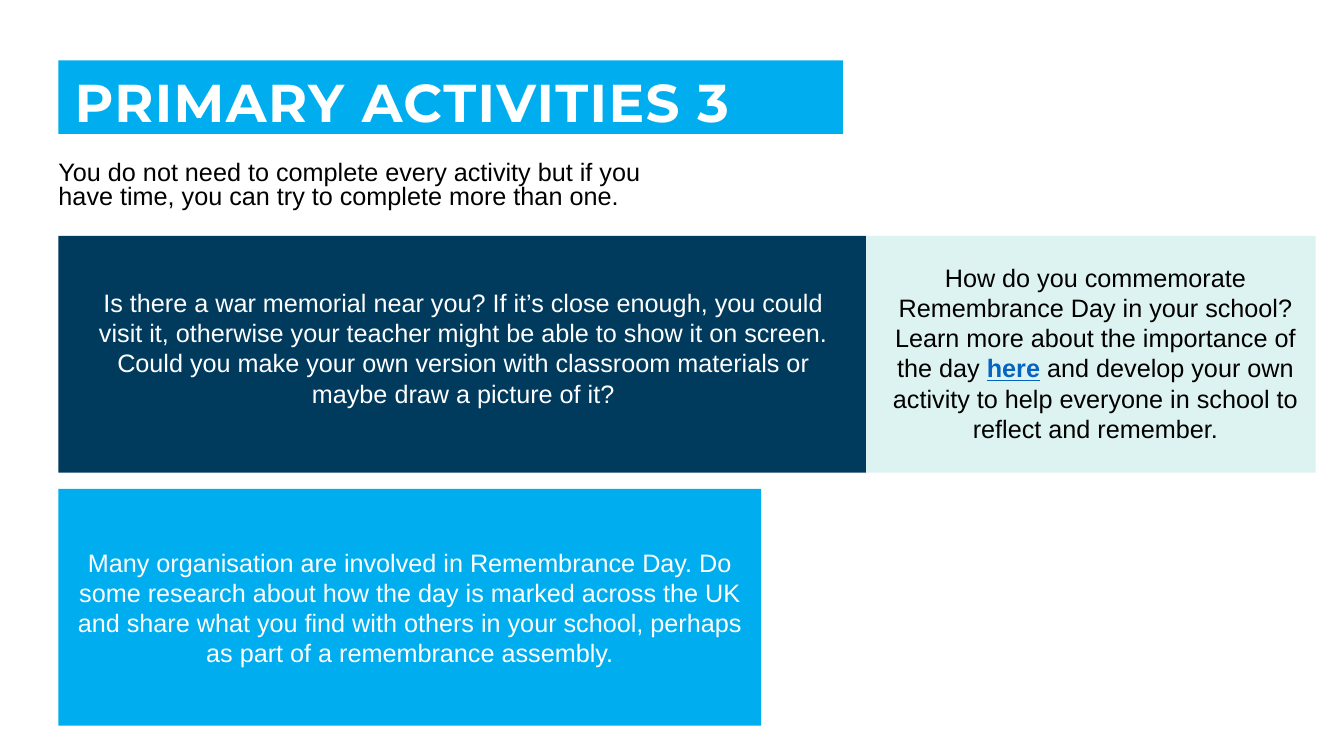
from pptx import Presentation
from pptx.dml.color import RGBColor as RGB
from pptx.enum.shapes import MSO_SHAPE as Shape
from pptx.enum.text import MSO_ANCHOR as Anchor, PP_ALIGN as Align
from pptx.util import Inches, Pt

COLOURS = {"sky": "00AEEF", "navy": "003B5E", "mint": "DDF3F1",
           "white": "FFFFFF", "black": "000000", "link": "0563C1"}

# Grid: one left margin, two equal rows of activities
LEFT, TOP = 0.58, 2.34
ROW, GAP = 2.35, 0.16
MEMORIAL_W, SCHOOL_W, RESEARCH_W = 8.01, 4.46, 6.97
SCHOOL_LEFT = LEFT + MEMORIAL_W
SECOND_TOP = TOP + ROW + GAP

deck = Presentation()
deck.slide_width, deck.slide_height = Inches(13.33), Inches(7.5)
slide = deck.slides.add_slide(deck.slide_layouts[6])


def panel(place, colour):
    block = slide.shapes.add_shape(Shape.RECTANGLE, *map(Inches, place))
    block.shadow.inherit = False
    block.fill.solid()
    block.fill.fore_color.rgb = RGB.from_string(COLOURS[colour])
    block.line.fill.background()
    return block


def write(holder, runs, frame_format, paragraph_format, **font_format):
    frame = holder.text_frame
    for key, value in {"word_wrap": True, **frame_format}.items():
        setattr(frame, key, value)
    paragraph = frame.paragraphs[0]
    for key, value in paragraph_format.items():
        setattr(paragraph, key, value)
    for words, colour, extra in runs:
        run = paragraph.add_run()
        run.text = words
        font = {"name": "Arial", "size": Pt(18), **font_format, **extra}
        for key, value in font.items():
            setattr(run.font, key, value)
        run.font.color.rgb = RGB.from_string(COLOURS[colour])
    return paragraph


# Title banner
banner = panel((LEFT, 0.6, 7.78, 0.73), "sky")
title = write(banner, [("PRIMARY ACTIVITIES 3", "white", {})],
              {"vertical_anchor": Anchor.MIDDLE, "margin_left": Inches(0.16),
               "margin_top": Inches(0.16), "margin_right": Inches(0.12),
               "margin_bottom": 0},
              {"alignment": Align.LEFT, "line_spacing": 0.9},
              name="Montserrat", size=Pt(38), bold=True)
title.runs[0].font._element.set("spc", "100")  # letter spacing of 1 pt

# Activity panels
panel((LEFT, TOP, MEMORIAL_W, ROW), "navy")
research = panel((LEFT, SECOND_TOP, RESEARCH_W, ROW), "sky")
panel((SCHOOL_LEFT, TOP, SCHOOL_W, ROW), "mint")

# Research activity, written inside its panel
centred = {"alignment": Align.CENTER}
write(research, [(
    "Many organisation are involved in Remembrance Day. Do some research "
    "about how the day is marked across the UK and share what you find with "
    "others in your school, perhaps as part of a remembrance assembly.",
    "white", {})], {"vertical_anchor": Anchor.MIDDLE}, centred)

# Introduction and the texts laid over the upper panels
texts = [
    ((LEFT, 1.56, 6.21, 0.62), [
        ("You do not need to complete every activity but if you have time, "
         "you can try to complete more than one.", "black", {})],
     {"margin_left": 0}, {"line_spacing": 0.8}),
    ((SCHOOL_LEFT + 0.09, 2.55, SCHOOL_W - 0.09, 1.92), [
        ("How do you commemorate Remembrance Day in your school? Learn more "
         "about the importance of the day ", "black", {}),
        ("here", "link", {"bold": True, "underline": True}),
        (" and develop your own activity to help everyone in school to "
         "reflect and remember.", "black", {})],
     {}, centred),
    ((LEFT + 0.2, 2.8, 7.63, 1.31), [
        ("Is there a war memorial near you? If it’s close enough, you could "
         "visit it, otherwise your teacher might be able to show it on "
         "screen. Could you make your own version with classroom materials "
         "or maybe draw a picture of it?", "white", {})],
     {}, centred),
]
for place, runs, frame_format, paragraph_format in texts:
    box = slide.shapes.add_textbox(*map(Inches, place))
    write(box, runs, frame_format, paragraph_format)

deck.save("out.pptx")
